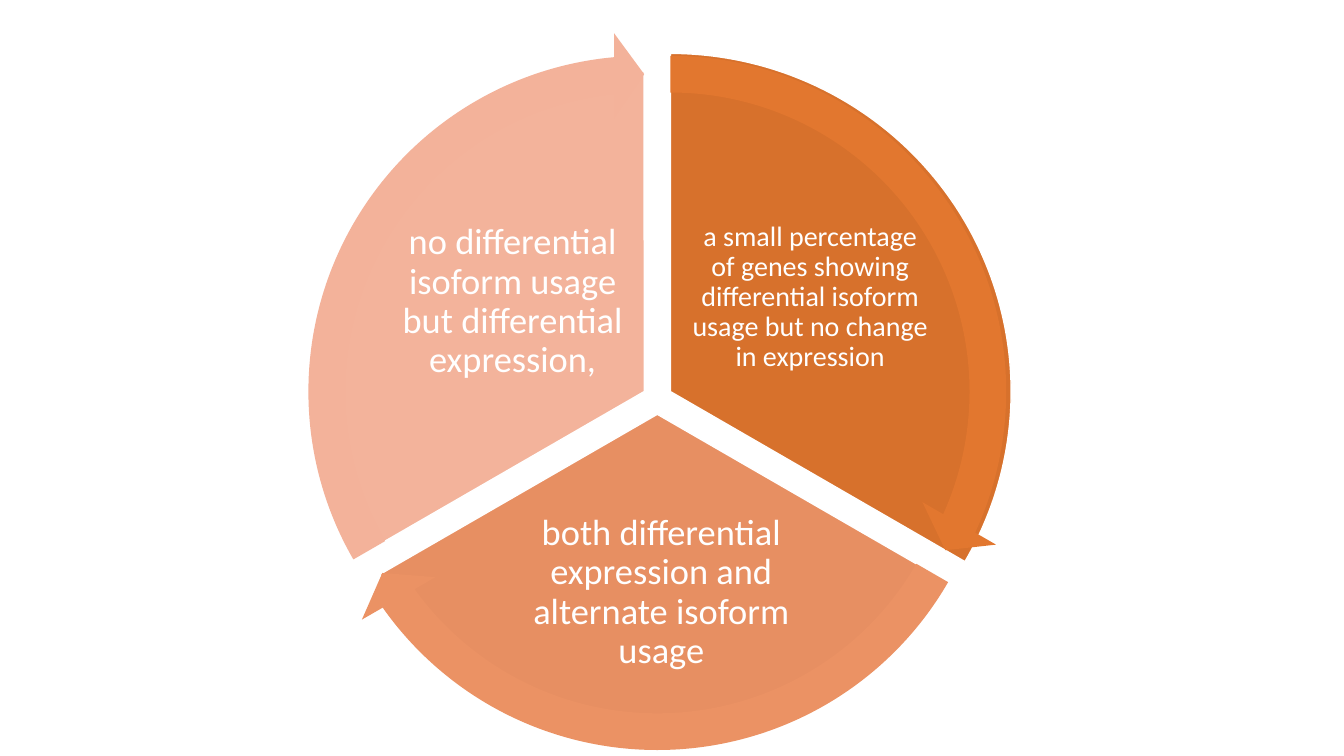
"""Build a slide with a three-part cycle of isoform usage and expression."""
import math

import pptx
import pptx.dml.color
import pptx.enum.shapes
import pptx.enum.text
import pptx.util

SHAPE = pptx.enum.shapes.MSO_SHAPE
WIDTH, HEIGHT = pptx.util.Inches(13.33), pptx.util.Inches(7.5)
HUB = (86.93, 52.8)
HUB_GAP = 2
ARROW_SIZE = 95.2
FULL_TURN, SECTOR_TURN, HEAD_TURN = 216, 72, 3.275

SECTORS = [
    ("a small percentage of genes showing differential isoform usage "
     "but no change in expression",
     20, 0.4, (91.07, 26, 32.13, 26.67), (90.13, 89.47), "D7712C", "E2772F"),
    ("both differential expression and alternate isoform usage",
     26, 0.53, (64.8, 67.33, 45.33, 22.13), (84.67, 84.67), "E78F62", "EB9264"),
    ("no differential isoform usage but differential expression,",
     26, 0.53, (52.67, 27.33, 30.27, 25.2), (84.67, 84.67), "F3B39B", "F3B29A"),
]


def share(percent):
    """Return a length given as a percentage of the slide's height."""
    return round(HEIGHT * percent / 100)


def color(value):
    """Return the colour for a hex string."""
    return pptx.dml.color.RGBColor.from_string(value)


def sector_turns(index):
    """Return the start and end angles of a sector in adjustment units."""
    start = (162 + SECTOR_TURN * index) % FULL_TURN
    return start, (start + SECTOR_TURN) % FULL_TURN


def add_round(page, kind, index, size, fill, adjustments):
    """Add a filled round shape, pushed outwards from the hub."""
    angle = math.radians(120 * index - 30)
    left = HUB[0] + HUB_GAP * math.cos(angle) - size[0] / 2
    top = HUB[1] + HUB_GAP * math.sin(angle) - size[1] / 2
    shape = page.shapes.add_shape(kind, *map(share, (left, top, *size)))
    for position, value in enumerate(adjustments):
        shape.adjustments[position] = value
    shape.shadow.inherit = False
    shape.fill.solid()
    shape.fill.fore_color.rgb = color(fill)
    shape.line.fill.background()
    return shape


def add_pie(page, index, size, fill):
    """Add the white-edged pie of a sector."""
    pie = add_round(page, SHAPE.PIE, index, size, fill, sector_turns(index))
    pie.line.color.rgb = color("FFFFFF")
    pie.line.width = pptx.util.Pt(1)


def add_arrow(page, index, fill):
    """Add the curved arrow along the rim of a sector."""
    start, end = sector_turns(index)
    turns = (0.051, HEAD_TURN, end - HEAD_TURN, start, 0.059)
    add_round(page, SHAPE.CIRCULAR_ARROW, index, (ARROW_SIZE, ARROW_SIZE), fill, turns)


def add_label(page, text, size, inset, place):
    """Add the centred white text of a sector."""
    box = page.shapes.add_textbox(*map(share, place))
    frame = box.text_frame
    frame.word_wrap = True
    frame.vertical_anchor = pptx.enum.text.MSO_ANCHOR.MIDDLE
    frame.margin_left = frame.margin_right = share(inset)
    frame.margin_top = frame.margin_bottom = share(inset)
    para = frame.paragraphs[0]
    para.text = text
    para.alignment = pptx.enum.text.PP_ALIGN.CENTER
    para.line_spacing = 0.9
    para.font.name = "Calibri"
    para.font.size = pptx.util.Pt(size)
    para.font.color.rgb = color("FFFFFF")


def main():
    """Build and save the deck."""
    deck = pptx.Presentation()
    deck.slide_width, deck.slide_height = WIDTH, HEIGHT
    page = deck.slides.add_slide(deck.slide_layouts[6])
    for index, (text, size, inset, place, pie_size, fill, _) in enumerate(SECTORS):
        add_pie(page, index, pie_size, fill)
        add_label(page, text, size, inset, place)
    for index, sector in enumerate(SECTORS):
        add_arrow(page, index, sector[-1])
    deck.save("out.pptx")


if __name__ == "__main__":
    main()
